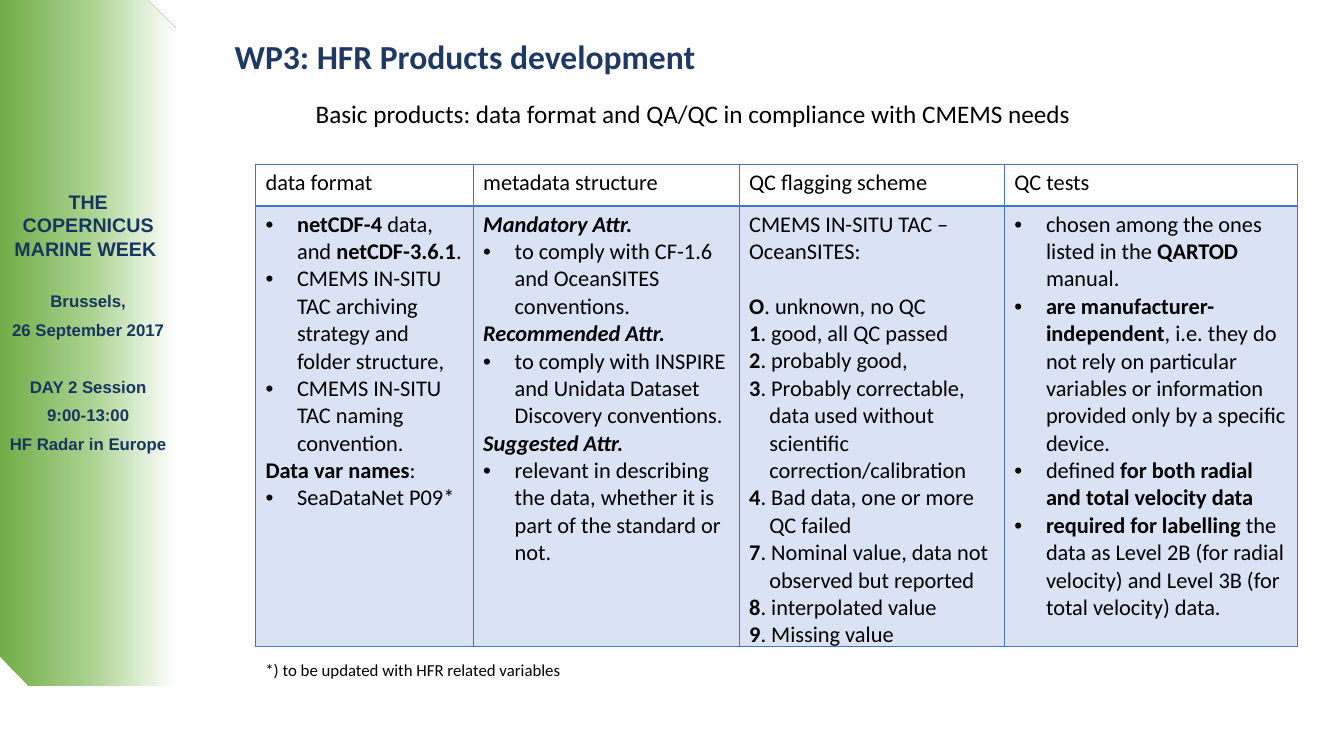
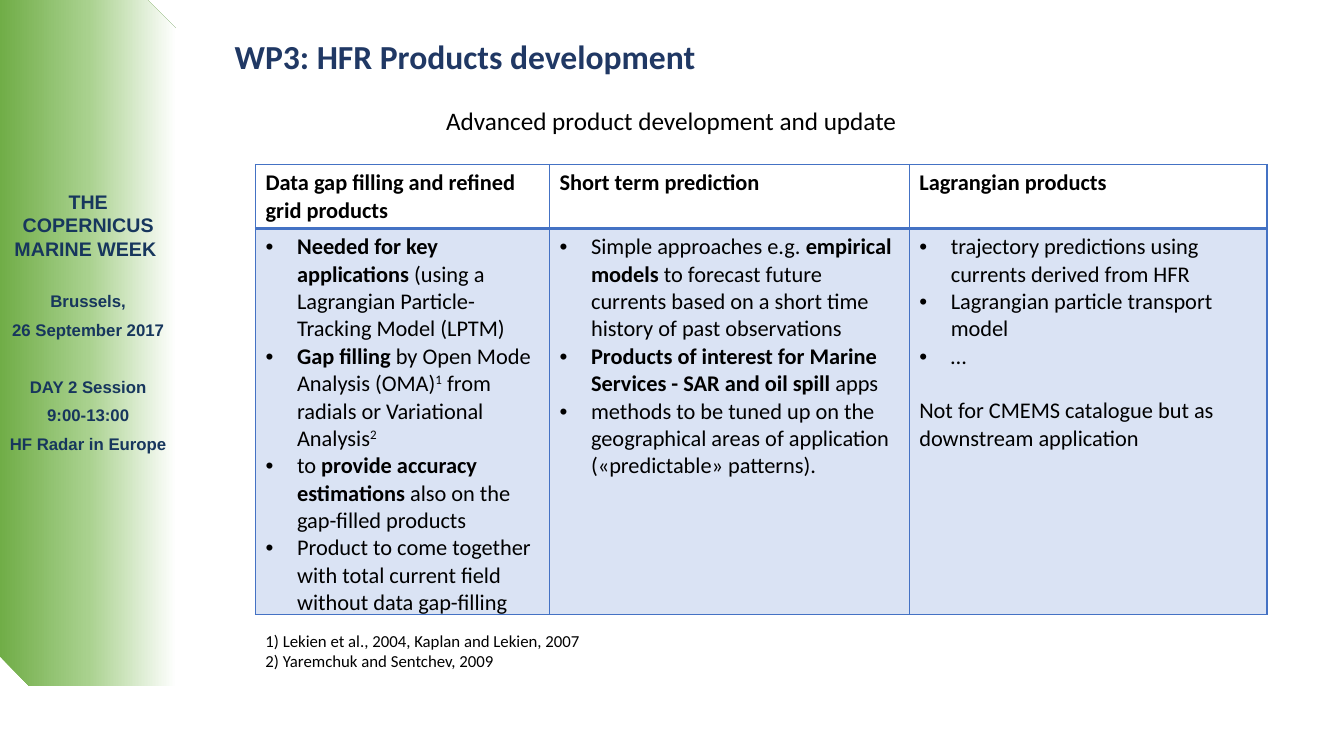
from lxml import etree
from pptx import Presentation
from pptx.dml.color import RGBColor
from pptx.enum import shapes, text
from pptx.oxml.ns import qn
from pptx.util import Pt

NAVY, SIDEBAR_NAVY, BLACK = "203864", "17365D", "000000"
RULE, CELL_TINT = "4472C4", "DAE3F4"
SIDEBAR_STOPS = [(0, "70AD47"), (50, "A9D18E"), (100, "FFFFFF")]

TITLE = "WP3: HFR Products development"
SIDEBAR = [
    ("THE COPERNICUS MARINE WEEK ", 14, 0, 0),
    ("Brussels,", 12, 22, 6),
    ("26 September 2017", 12, 0, 6),
    ("DAY 2 Session", 12, 20, 6),
    ("9:00-13:00", 12, 0, 6),
    ("HF Radar in Europe", 12, 0, 6),
]

INDENTS = {"bullet": 22.5, "flag": 14.4, "first flag": 14.4}
GAPS_BEFORE = {"first flag": 19.5, "closing": 19.5}

BASIC = {
    "subtitle": ("Basic products: data format and QA/QC in compliance with CMEMS needs", 196.5, 67, 597),
    "columns": [155.5, 190, 189.5, 209.5],
    "height": 344,
    "headings": ["data format", "metadata structure", "QC flagging scheme", "QC tests"],
    "details": [
        [
            ("bullet", "**netCDF-4 **data, and **netCDF-3.6.1**."),
            ("bullet", "CMEMS IN-SITU TAC archiving strategy and folder structure,"),
            ("bullet", "CMEMS IN-SITU TAC naming convention."),
            ("plain", "**Data var names**:"),
            ("bullet", "SeaDataNet P09*"),
        ],
        [
            ("attribute", "**Mandatory Attr.**"),
            ("bullet", "to comply with CF-1.6 and OceanSITES conventions."),
            ("attribute", "**Recommended Attr.**"),
            ("bullet", "to comply with INSPIRE and Unidata Dataset Discovery conventions."),
            ("attribute", "**Suggested Attr.**"),
            ("bullet", "relevant in describing the data, whether it is part of the standard or not."),
        ],
        [
            ("plain", "CMEMS IN-SITU TAC –OceanSITES:"),
            ("first flag", "**O**. unknown, no QC"),
            ("flag", "**1**. good, all QC passed"),
            ("flag", "**2**. probably good,"),
            ("flag", "**3**. Probably correctable, data used without scientific correction/calibration"),
            ("flag", "**4**. Bad data, one or more QC failed"),
            ("flag", "**7**. Nominal value, data not observed but reported"),
            ("flag", "**8**. interpolated value"),
            ("flag", "**9**. Missing value"),
        ],
        [
            ("bullet", "chosen among the ones listed in the **QARTOD** manual."),
            ("bullet", "**are manufacturer-independent**, i.e. they do not rely on particular "
                       "variables or information provided only by a specific device."),
            ("bullet", "defined **for both radial and total velocity data**"),
            ("bullet", "**required for labelling **the data as Level 2B (for radial velocity) "
                       "and Level 3B (for total velocity) data."),
        ],
    ],
    "footnotes": (["*) to be updated with HFR related variables"], 468),
}
ADVANCED = {
    "subtitle": ("Advanced product development and update", 300, 72, 359),
    "columns": [210, 257, 255.5],
    "height": 322,
    "headings": ["**Data gap filling and refined grid products**",
                 "**Short term prediction**", "**Lagrangian products**"],
    "details": [
        [
            ("bullet", "**Needed for key applications **(using a Lagrangian "
                       "Particle-Tracking Model (LPTM)"),
            ("bullet", "**Gap filling **by Open Mode Analysis (OMA)^1^ from radials "
                       "or Variational Analysis^2^"),
            ("bullet", "to **provide accuracy estimations **also on the gap-filled products"),
            ("bullet", "Product to come together with total current field without data gap-filling"),
        ],
        [
            ("bullet", "Simple approaches e.g. **empirical models** to forecast future "
                       "currents based on a short time history of past observations"),
            ("bullet", "**Products of interest for Marine Services - SAR and oil spill** apps"),
            ("bullet", "methods to be tuned up on the geographical areas of application "
                       "(«predictable» patterns)."),
        ],
        [
            ("bullet", "trajectory predictions using currents derived from HFR"),
            ("bullet", "Lagrangian particle transport model"),
            ("bullet", "…"),
            ("closing", "Not for CMEMS catalogue but as downstream application"),
        ],
    ],
    "footnotes": (["1) Lekien et al., 2004, Kaplan and Lekien, 2007",
                   "2) Yaremchuk and Sentchev, 2009"], 447),
}


def rgb(value):
    return RGBColor.from_string(value)


def style(font, size, color=BLACK, bold=False, face="Calibri"):
    font.name, font.size, font.bold = face, Pt(size), bold
    font.color.rgb = rgb(color)


def add_lines(slide, lines, box, size, color=BLACK, bold=False, face="Calibri"):
    frame = slide.shapes.add_textbox(*map(Pt, box)).text_frame
    frame.word_wrap = True
    frame.text = "\n".join(lines)
    for paragraph in frame.paragraphs:
        for run in paragraph.runs:
            style(run.font, size, color, bold, face)
    return frame


def add_sidebar(slide):
    band = slide.shapes.add_shape(shapes.MSO_SHAPE.SNIP_2_DIAG_RECTANGLE, 0, 0, Pt(126), Pt(490))
    band.shadow.inherit = False
    band.line.fill.background()
    band.fill.gradient()
    band.fill.gradient_angle = 0
    stops = next(band._element.iter(qn("a:gsLst")))
    for stop in list(stops):
        stops.remove(stop)
    for position, color in SIDEBAR_STOPS:
        stop = etree.SubElement(stops, qn("a:gs"), pos=str(position * 1000))
        etree.SubElement(stop, qn("a:srgbClr"), val=color)

    event = add_lines(slide, [line[0] for line in SIDEBAR], (0, 132, 126, 220),
                      12, SIDEBAR_NAVY, True, "Arial")
    event.margin_left = event.margin_right = Pt(2.88)
    for paragraph, (_, size, before, after) in zip(event.paragraphs, SIDEBAR):
        paragraph.alignment = text.PP_ALIGN.CENTER
        paragraph.space_before, paragraph.space_after = Pt(before), Pt(after)
        for run in paragraph.runs:
            run.font.size = Pt(size)


def add_title(slide):
    paragraph = add_lines(slide, [TITLE], (142.5, 18, 796, 41), 24, NAVY, True).paragraphs[0]
    paragraph.line_spacing = 1.15
    paragraph._p.get_or_add_pPr().set("indent", str(Pt(18)))


def write_marked(paragraph, kind, marked):
    properties = paragraph._p.get_or_add_pPr()
    if kind in INDENTS:
        properties.set("marL", str(Pt(INDENTS[kind])))
        properties.set("indent", str(-Pt(INDENTS[kind])))
    if kind == "bullet":
        etree.SubElement(properties, qn("a:buFont"), typeface="Arial")
        etree.SubElement(properties, qn("a:buChar"), char="•")
    if kind in GAPS_BEFORE:
        paragraph.space_before = Pt(GAPS_BEFORE[kind])
    for i, part in enumerate(marked.split("**")):
        for j, piece in enumerate(part.split("^")):
            if not piece:
                continue
            run = paragraph.add_run()
            run.text = piece
            style(run.font, 16, bold=i % 2 == 1)
            run.font.italic = kind == "attribute"
            if j % 2:
                run._r.get_or_add_rPr().set("baseline", "30000")


def set_borders(cell, widths):
    properties = cell._tc.get_or_add_tcPr()
    for index, (side, width) in enumerate(zip("LRTB", widths)):
        line = etree.Element(qn(f"a:ln{side}"), w=str(Pt(width)))
        fill = etree.SubElement(line, qn("a:solidFill"))
        etree.SubElement(fill, qn("a:srgbClr"), val=RULE)
        properties.insert(index, line)


def add_products(slide, content):
    columns = content["columns"]
    holder = slide.shapes.add_table(2, len(columns), Pt(182.5), Pt(117.5),
                                    Pt(sum(columns)), Pt(content["height"]))
    table = holder.table
    table.first_row = table.horz_banding = False
    for column, width in zip(table.columns, columns):
        column.width = Pt(width)
    for row in table.rows:
        row.height = Pt(29.5)
    holder.height = Pt(content["height"])

    for index, (heading, details) in enumerate(zip(content["headings"], content["details"])):
        top, body = table.cell(0, index), table.cell(1, index)
        top.fill.background()
        set_borders(top, (1, 1, 1, 2))
        write_marked(top.text_frame.paragraphs[0], "plain", heading)
        body.fill.solid()
        body.fill.fore_color.rgb = rgb(CELL_TINT)
        set_borders(body, (1, 1, 2, 1))
        frame = body.text_frame
        for number, (kind, marked) in enumerate(details):
            paragraph = frame.add_paragraph() if number else frame.paragraphs[0]
            write_marked(paragraph, kind, marked)


def add_product_slide(deck, content):
    slide = deck.slides.add_slide(deck.slide_layouts[6])
    add_sidebar(slide)
    add_title(slide)
    subtitle, left, top, width = content["subtitle"]
    frame = add_lines(slide, [subtitle], (left, top, width, 29), 18)
    frame.paragraphs[0].alignment = text.PP_ALIGN.CENTER
    add_products(slide, content)
    notes, top = content["footnotes"]
    add_lines(slide, notes, (182.5, top, 300, 7.5 + 14.5 * len(notes)), 12)


def main():
    deck = Presentation()
    deck.slide_width, deck.slide_height = Pt(960), Pt(540)
    for content in (BASIC, ADVANCED):
        add_product_slide(deck, content)
    deck.save("out.pptx")


if __name__ == "__main__":
    main()
